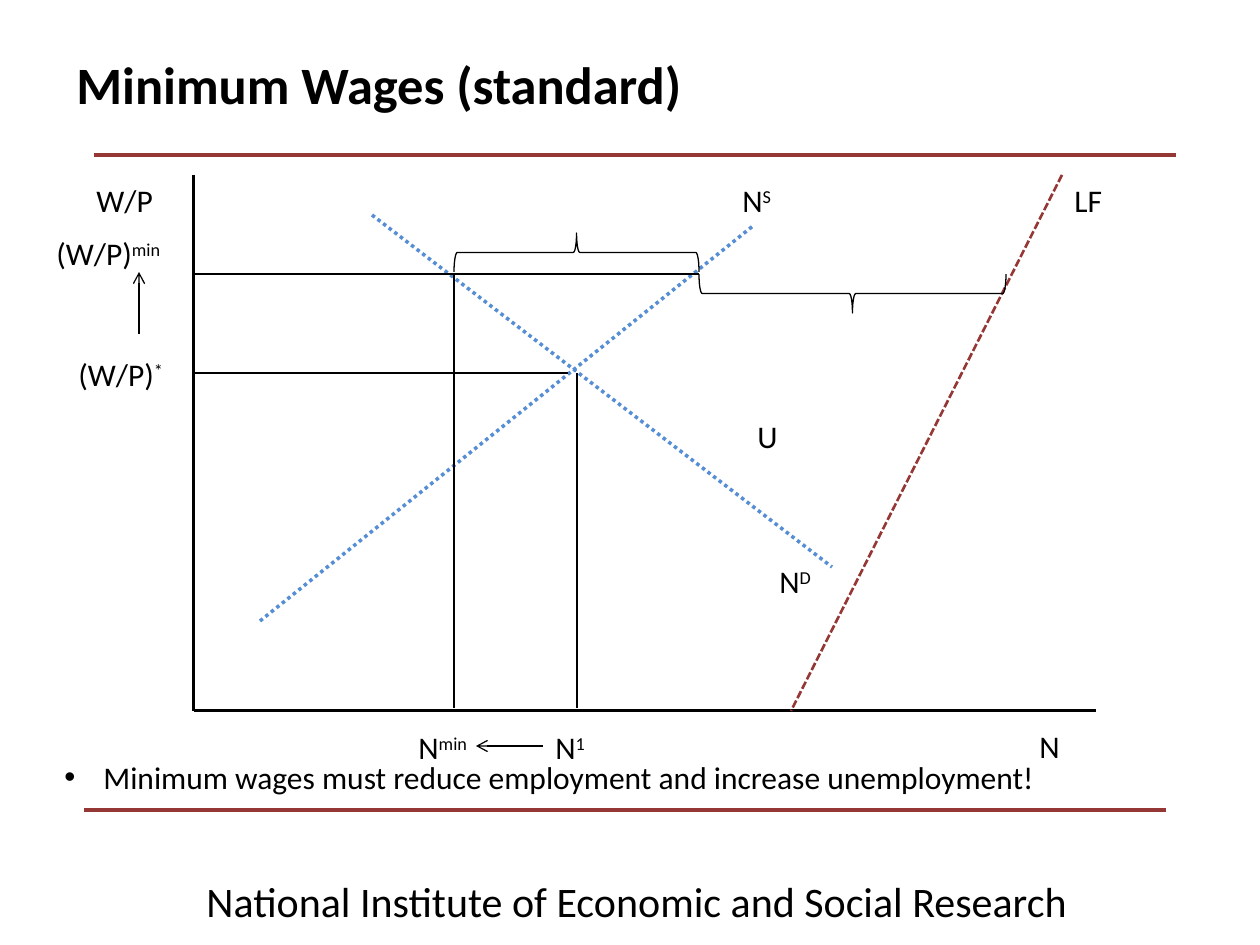
from lxml.etree import SubElement
from pptx import Presentation
from pptx.dml.color import RGBColor
from pptx.enum.dml import MSO_LINE
from pptx.enum.shapes import MSO_CONNECTOR, MSO_SHAPE
from pptx.enum.text import MSO_ANCHOR, MSO_AUTO_SIZE
from pptx.oxml.ns import qn
from pptx.util import Emu, Pt

BLACK, RED, BLUE = "000000", "953735", "558ED5"


def px(count):
    return Emu(round(count * 914400 / 126))


def color(code):
    return RGBColor.from_string(code)


class Board:
    """Draws styled elements on the current slide."""

    def __init__(self, slide, font="Calibri"):
        self.shapes = slide.shapes
        self.font = font

    def line(self, start, end, code=BLACK, width=0.75, dash=None, arrow=False):
        ends = [px(value) for value in (*start, *end)]
        item = self.shapes.add_connector(MSO_CONNECTOR.STRAIGHT, *ends)
        item.line.color.rgb = color(code)
        item.line.width = Pt(width)
        if dash:
            item.line.dash_style = dash
        props = item._element.spPr
        if arrow:
            SubElement(props.find(qn("a:ln")), qn("a:tailEnd"), type="arrow")
        SubElement(props, qn("a:effectLst"))

    def brace(self, left, right, top, turn, depth=39):
        span = right - left
        shift = (span - depth) / 2
        item = self.shapes.add_shape(
            MSO_SHAPE.LEFT_BRACE, px(left + shift), px(top - shift), px(depth), px(span))
        item.rotation = turn
        item.shadow.inherit = False
        item.fill.background()
        item.line.color.rgb = color(BLACK)
        item.line.width = Pt(0.75)

    def text(self, words, left, top, width, height=50, size=18, bold=False,
             anchor=MSO_ANCHOR.TOP, bullet=False):
        box = self.shapes.add_textbox(px(left), px(top), px(width), px(height))
        frame = box.text_frame
        frame.word_wrap = True
        frame.auto_size = MSO_AUTO_SIZE.SHAPE_TO_FIT_TEXT
        frame.vertical_anchor = anchor
        para = frame.paragraphs[0]
        if bullet:
            props = para._p.get_or_add_pPr()
            props.set("marL", str(px(39)))
            props.set("indent", str(-px(39)))
            SubElement(props, qn("a:buFont"), typeface="Arial")
            SubElement(props, qn("a:buChar"), char="•")
        base, _, power = words.partition("^")
        for part in filter(None, (base, power)):
            run = para.add_run()
            run.text = part
            run.font.name = self.font
            run.font.size = Pt(size)
            run.font.bold = bold
            run.font.color.rgb = color(BLACK)
            if part is power:
                run._r.get_or_add_rPr().set("baseline", "30000")


def main():
    deck = Presentation()
    deck.slide_width, deck.slide_height = px(1260), px(945)
    board = Board(deck.slides.add_slide(deck.slide_layouts[6]))

    for left, top in ((94, 155), (84, 810)):
        board.line((left, top), (left + 1082, top), RED, 2.25)
    board.text("National Institute of Economic and Social Research",
               194, 869, 1002, size=24)
    board.text("Minimum Wages (standard)", 64, 45, 1134, 77, size=30, bold=True,
               anchor=MSO_ANCHOR.MIDDLE)

    axis, top, base = 194, 175, 711
    low, mid, high, full = 454, 577, 699, 1006
    floor, market = 274, 373
    board.line((axis, top), (axis, base), width=1.75)
    board.line((axis, base), (1096, base), width=1.75)
    board.line((1062, top), (791, base), RED, 1.5, MSO_LINE.SQUARE_DOT)
    board.line((372, 215), (832, 567), BLUE, 2, MSO_LINE.ROUND_DOT)
    board.line((260, 621), (753, 226), BLUE, 2, MSO_LINE.ROUND_DOT)

    board.line((axis, market), (568, market))
    board.line((mid, market), (mid, 708))
    board.line((axis, floor), (high, floor))
    board.line((low, floor), (low, 708))
    board.brace(low, high, floor - 41, 90)
    board.brace(high, full, floor, 270)
    board.line((139, 334), (139, 272), arrow=True)
    board.line((543, 746), (476, 746), arrow=True)

    for words, left, y, width in (
        ("W/P", 84, top, 110),
        ("(W/P)^min", 44, 228, 154),
        ("(W/P)^*", 66, 349, 118),
        ("N^S", 730, top, 149),
        ("LF", 1062, top, 93),
        ("U", 745, 411, 52),
        ("N^D", 767, 556, 149),
        ("N^min", 406, 722, 83),
        ("N^1", 543, 722, 68),
        ("N", 1027, 721, 69),
    ):
        board.text(words, left, y, width)
    board.text("Minimum wages must reduce employment and increase unemployment!",
               52, 752, 1188, bullet=True)
    deck.save("out.pptx")


if __name__ == "__main__":
    main()
